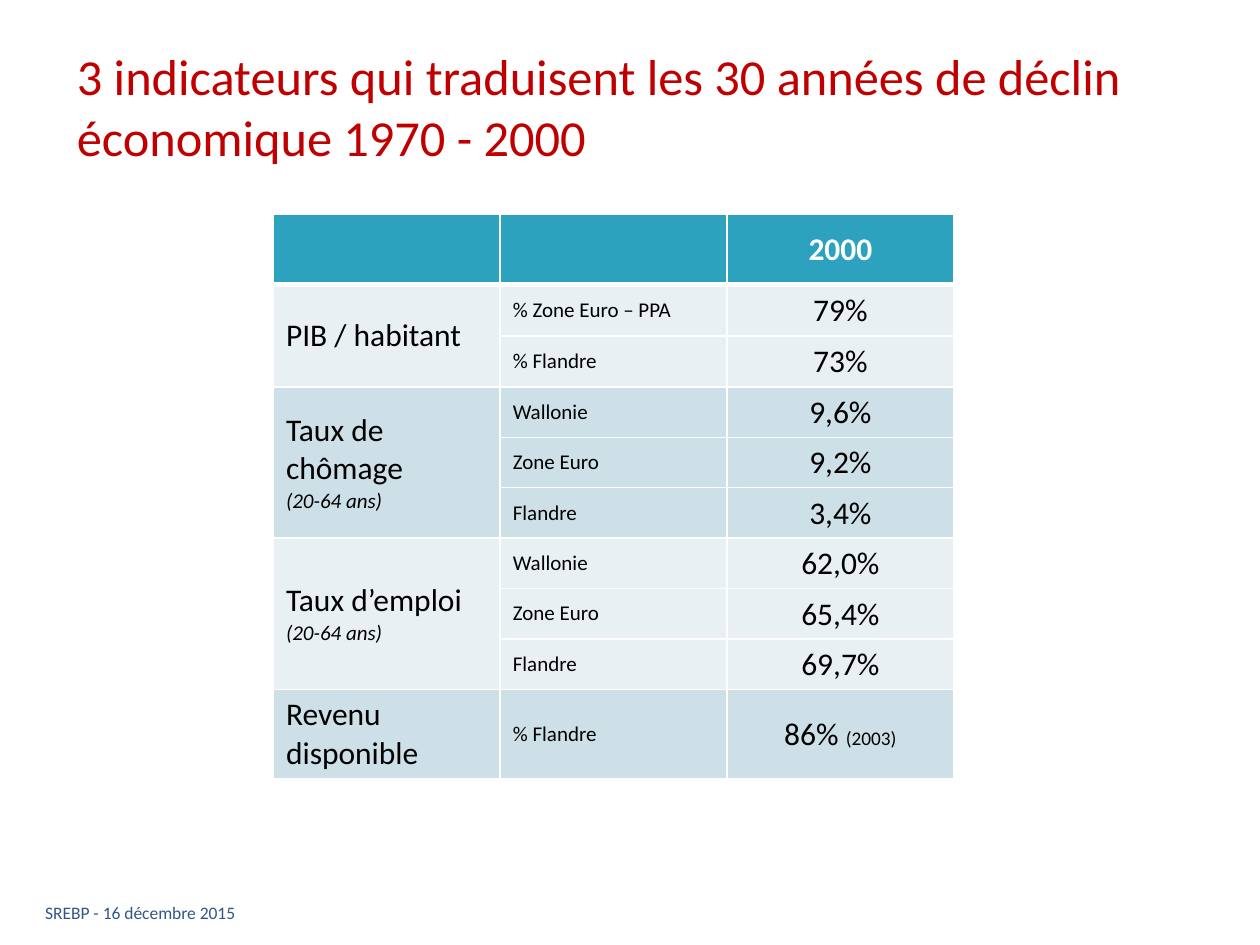
from lxml import etree
from pptx import Presentation
from pptx.dml.color import RGBColor
from pptx.enum.text import MSO_ANCHOR, MSO_AUTO_SIZE, PP_ALIGN
from pptx.oxml.ns import qn
from pptx.util import Pt

EMU_PER_PX = 9144  # 100 px to the inch
TITLE_ONLY = 5
MIDDLE = MSO_ANCHOR.MIDDLE
LEFT, CENTER = PP_ALIGN.LEFT, PP_ALIGN.CENTER
NO_AUTOFIT = MSO_AUTO_SIZE.NONE

RED = RGBColor(0xC0, 0x00, 0x00)
NAVY = RGBColor(0x31, 0x56, 0x87)
TEAL = RGBColor(0x2D, 0xA2, 0xBF)
PALE = RGBColor(0xE8, 0xF0, 0xF4)
LIGHT = RGBColor(0xCD, 0xE0, 0xE8)
BLACK = RGBColor(0x00, 0x00, 0x00)
WHITE = RGBColor(0xFF, 0xFF, 0xFF)

AGES = "(20-64 ans)"
# Each group: indicator, optional note, rows of (label, value, optional note)
GROUPS = [
    ("PIB / habitant", None,
     [("% Zone Euro – PPA", "79%", None), ("% Flandre", "73%", None)]),
    ("Taux de chômage", AGES,
     [("Wallonie", "9,6%", None), ("Zone Euro", "9,2%", None), ("Flandre", "3,4%", None)]),
    ("Taux d’emploi", AGES,
     [("Wallonie", "62,0%", None), ("Zone Euro", "65,4%", None), ("Flandre", "69,7%", None)]),
    ("Revenu disponible", None,
     [("% Flandre", "86% ", "(2003)")]),
]


def px(length):
    return length * EMU_PER_PX


class SlideBuilder:
    font_name = "Calibri"

    def __init__(self, deck):
        self.page = deck.slides.add_slide(deck.slide_layouts[TITLE_ONLY])

    def style(self, font, size, color, bold=False, italic=False):
        font.name, font.size, font.color.rgb = self.font_name, Pt(size), color
        font.bold, font.italic = bold, italic

    def fill_frame(self, frame, text, size, color):
        frame.word_wrap = True
        frame.auto_size = NO_AUTOFIT
        frame.vertical_anchor = MIDDLE
        para = frame.paragraphs[0]
        para.text, para.alignment = text, LEFT
        self.style(para.font, size, color)

    def title(self, text, left, top, width, height):
        box = self.page.shapes.title
        box.left, box.top, box.width, box.height = map(px, (left, top, width, height))
        self.fill_frame(box.text_frame, text, 28.8, RED)

    def footer(self, text, left, top, width, height):
        box = self.page.shapes.add_textbox(*map(px, (left, top, width, height)))
        self.fill_frame(box.text_frame, text, 10, NAVY)

    def table(self, left, top, column_widths, row_heights):
        area = (left, top, sum(column_widths), sum(row_heights))
        grid = self.page.shapes.add_table(
            len(row_heights), len(column_widths), *map(px, area)).table
        for column, width in zip(grid.columns, column_widths):
            column.width = px(width)
        for row, height in zip(grid.rows, row_heights):
            row.height = px(height)
        return grid

    def cell(self, cell, fill, top_line=1, bottom_line=1):
        properties = cell._tc.get_or_add_tcPr()
        for side, weight in (("L", 1), ("R", 1), ("T", top_line), ("B", bottom_line)):
            line = etree.SubElement(properties, qn(f"a:ln{side}"), w=str(Pt(weight)))
            solid = etree.SubElement(line, qn("a:solidFill"))
            etree.SubElement(solid, qn("a:srgbClr"), val=str(WHITE))
        cell.fill.solid()
        cell.fill.fore_color.rgb = fill
        cell.vertical_anchor = MIDDLE

    def cell_text(self, cell, text, size, color=BLACK, alignment=LEFT, bold=False):
        para = cell.text_frame.paragraphs[0]
        para.text, para.alignment = text, alignment
        self.style(para.font, size, color, bold)
        return para


def main():
    deck = Presentation()
    deck.slide_width, deck.slide_height = px(1000), px(750)
    slide = SlideBuilder(deck)

    # Title and footer
    slide.title("3 indicateurs qui traduisent les 30 années de déclin économique 1970 - 2000",
                51, 44, 900, 80)
    slide.footer("SREBP - 16 décembre 2015", 26, 706, 450, 36)

    # Table header
    grid = slide.table(217, 170, [180] * 3, [56] + [40] * 8 + [70])
    for column in range(3):
        slide.cell(grid.cell(0, column), TEAL, bottom_line=3)
    slide.cell_text(grid.cell(0, 2), "2000", 18, WHITE, CENTER, bold=True)

    # Indicator groups, in alternating bands
    first = 1
    for index, (indicator, note, rows) in enumerate(GROUPS):
        for offset, (label, value, value_note) in enumerate(rows):
            cells = [grid.cell(first + offset, column) for column in range(3)]
            for cell in cells:
                slide.cell(cell, LIGHT if index % 2 else PALE,
                           top_line=3 if first + offset == 1 else 1)
            slide.cell_text(cells[1], label, 12)
            para = slide.cell_text(cells[2], value, 18, alignment=CENTER)
            if index:
                cells[2].margin_left = cells[2].margin_right = cells[2].margin_top = px(1)
                cells[2].margin_bottom = 0
            if value_note:
                span = para.add_run()
                span.text = value_note
                span.font.size = Pt(11)

        heading = grid.cell(first, 0)
        slide.cell_text(heading, indicator, 18)
        if note:
            para = heading.text_frame.add_paragraph()
            para.text = note
            slide.style(para.font, 12, BLACK, italic=True)
        if len(rows) > 1:
            heading.merge(grid.cell(first + len(rows) - 1, 0))
        first += len(rows)

    deck.save("out.pptx")


if __name__ == "__main__":
    main()
